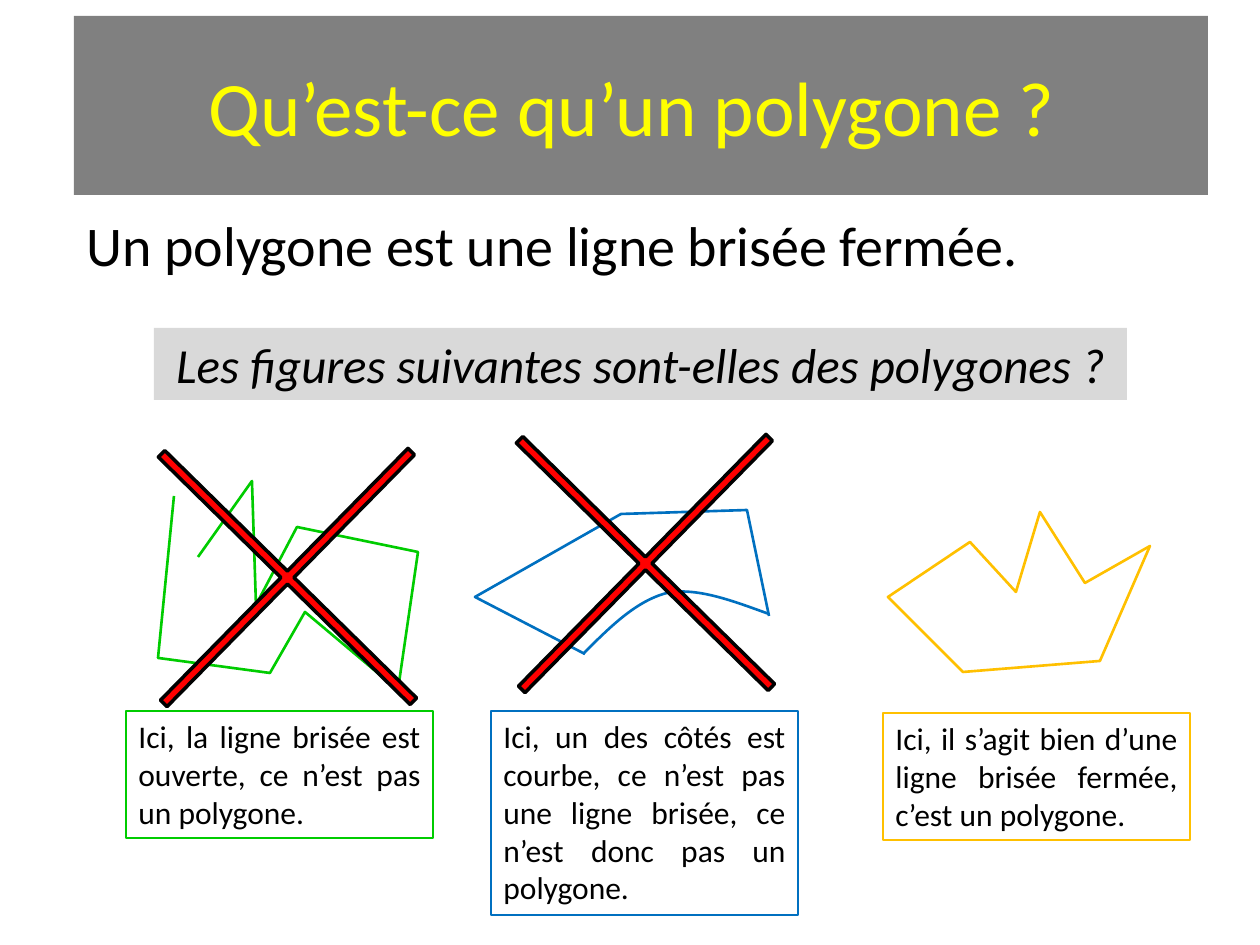
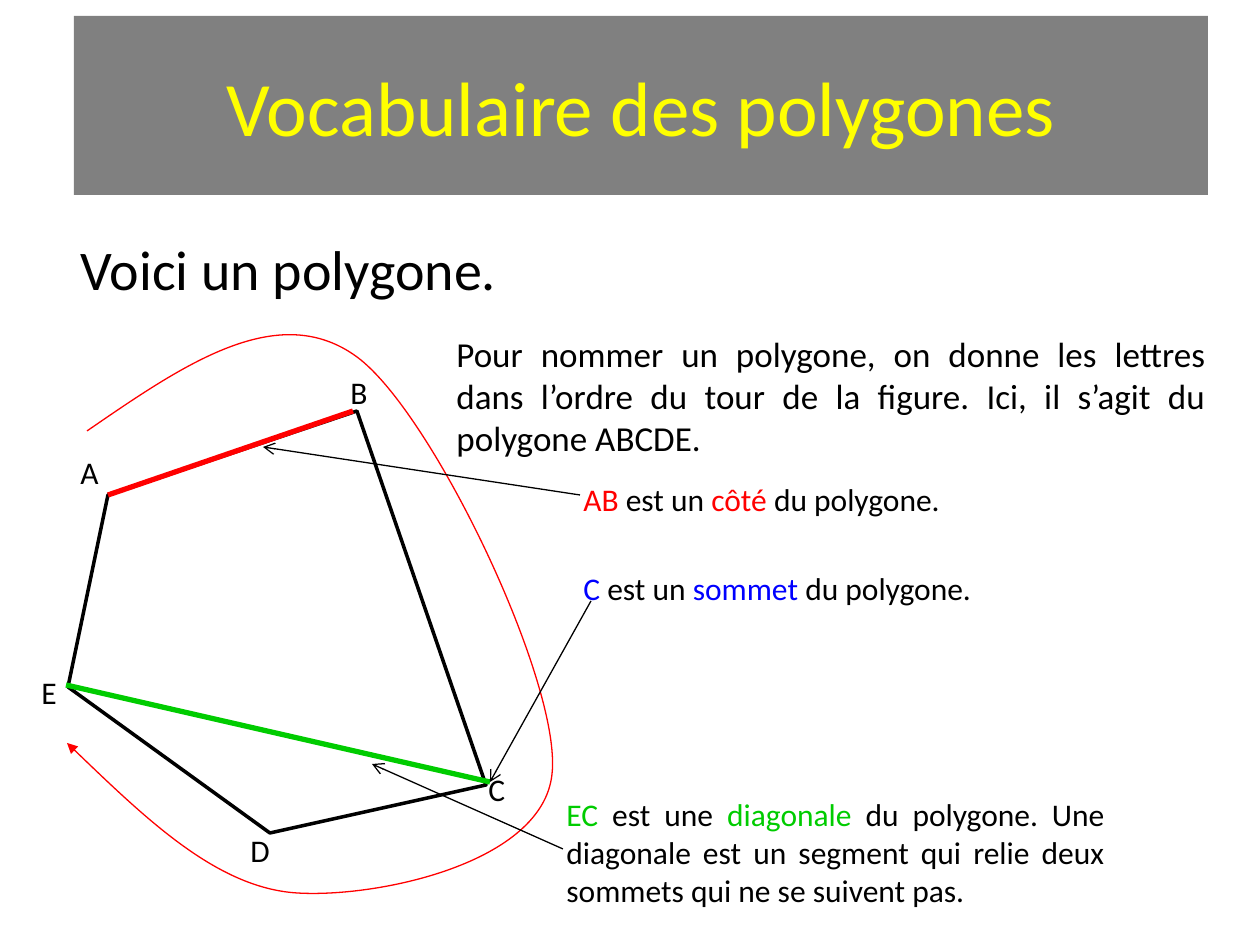
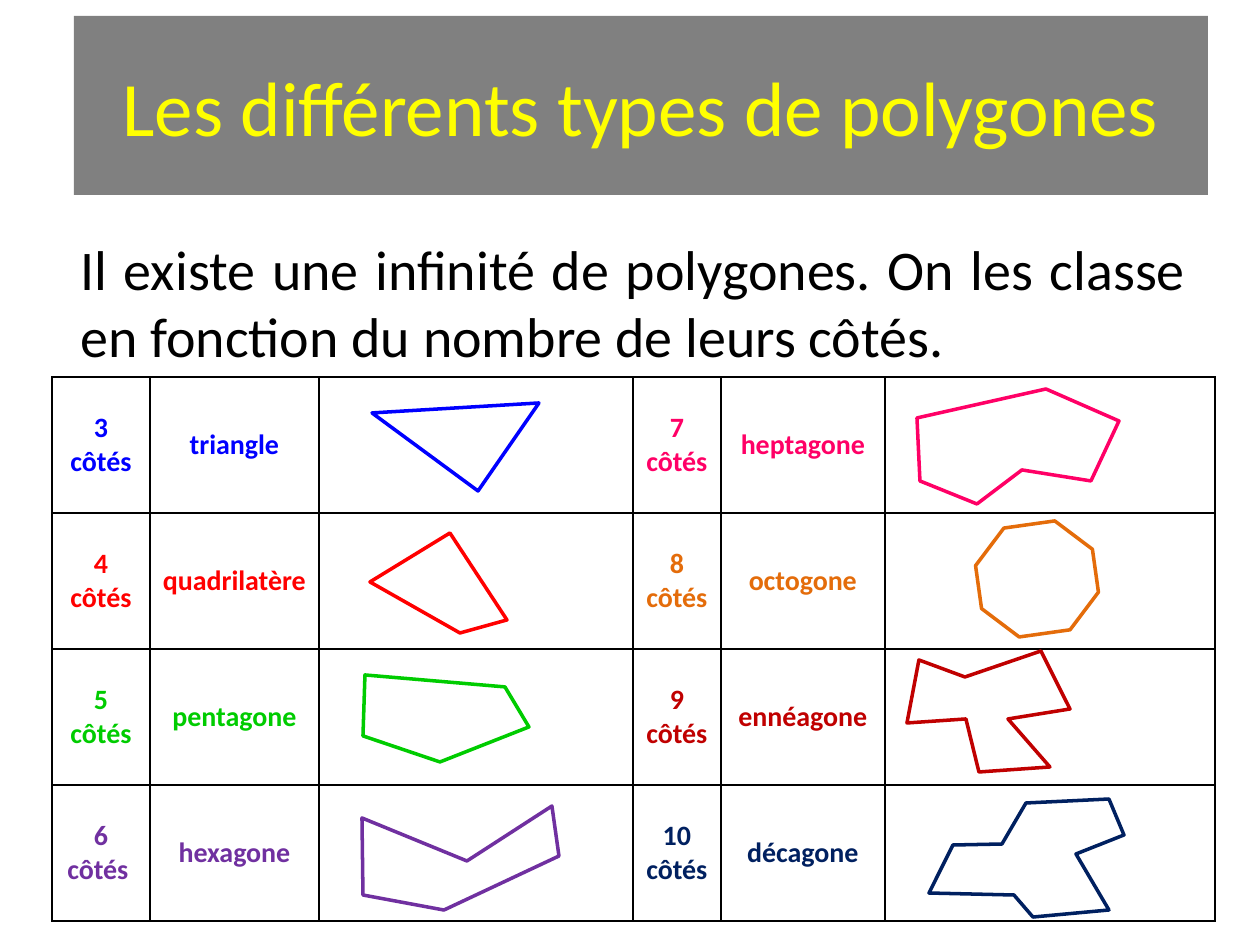
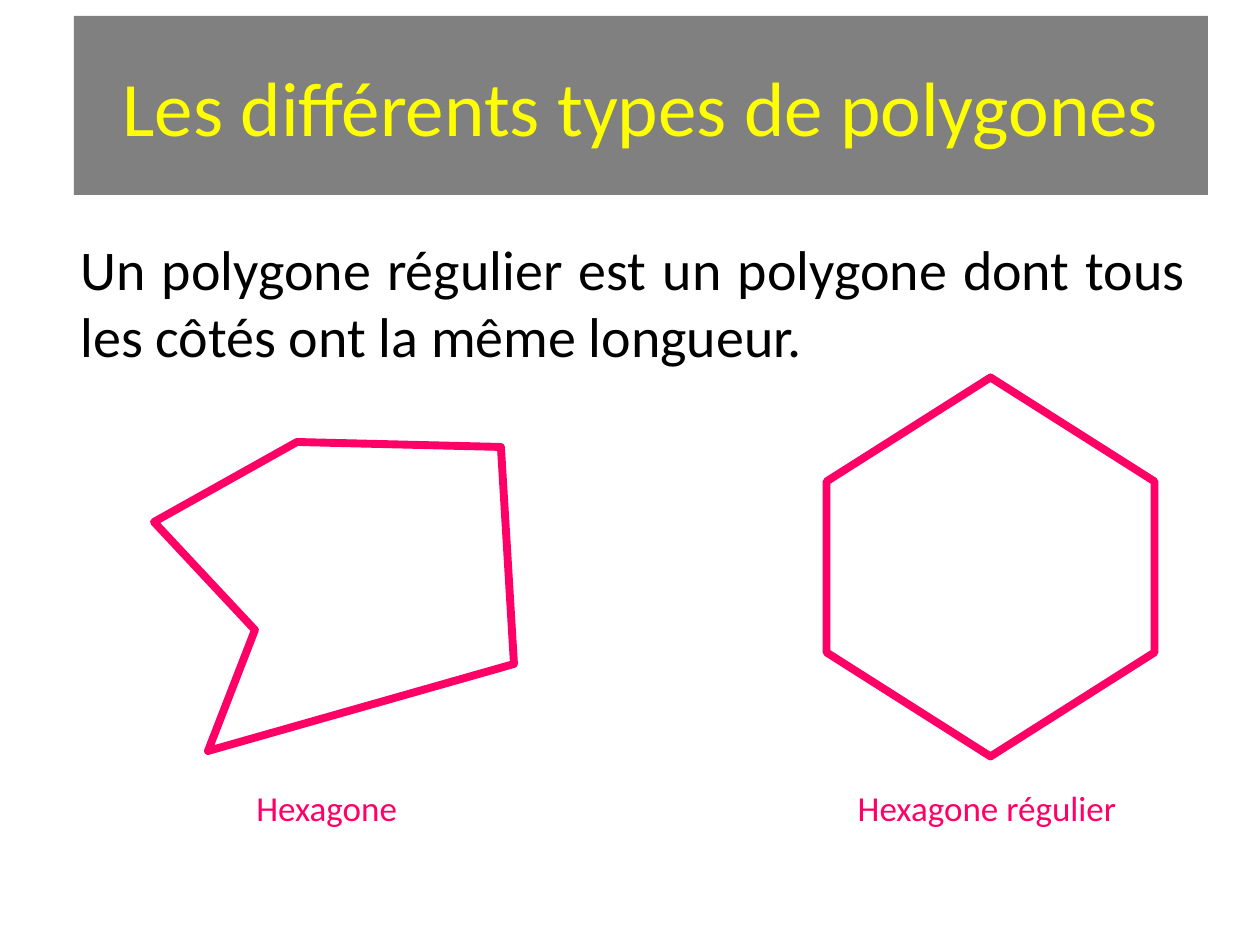
from lxml.etree import SubElement
from pptx import Presentation
from pptx.dml.color import RGBColor
from pptx.enum.shapes import MSO_CONNECTOR, MSO_SHAPE
from pptx.enum.text import MSO_ANCHOR, MSO_AUTO_SIZE, PP_ALIGN
from pptx.oxml.ns import qn
from pptx.util import Pt

PX = 914400 / 126
FONT = "Calibri"
BLACK, WHITE, GREY, LIGHT_GREY = "000000", "FFFFFF", "808080", "D9D9D9"
YELLOW, AMBER, ORANGE = "FFFF00", "FFC000", "E46C0A"
RED, DARK_RED, PINK, PURPLE = "FF0000", "C00000", "FF0066", "7030A0"
GREEN, BLUE, SKY, NAVY = "00CC00", "0000FF", "0070C0", "002060"
LEFT, CENTER, JUSTIFY = PP_ALIGN.LEFT, PP_ALIGN.CENTER, PP_ALIGN.JUSTIFY


def px(n):
    return round(n * PX)


def rgb(color):
    return RGBColor.from_string(color)


def paint(sp, fill=None, line=None, weight=1.5):
    if fill:
        sp.fill.solid()
        sp.fill.fore_color.rgb = rgb(fill)
    else:
        sp.fill.background()
    if line:
        stroke(sp, line, weight)
    else:
        sp.line.fill.background()
    sp.shadow.inherit = False


def stroke(sp, color, weight, arrow=None):
    sp.line.color.rgb = rgb(color)
    sp.line.width = Pt(weight)
    if arrow:
        SubElement(sp.element.spPr.find(qn("a:ln")), qn("a:tailEnd"), type=arrow)


def write(tf, runs, size, align, bold=False, italic=False):
    """Fill the first paragraph with (text, colour) runs."""
    p = tf.paragraphs[0]
    p.alignment = align
    for text, color in runs:
        r = p.add_run()
        r.text = text
        r.font.name, r.font.size = FONT, Pt(size)
        r.font.bold, r.font.italic = bold, italic
        r.font.color.rgb = rgb(color)


def text_box(slide, box, runs, size, align=JUSTIFY, fill=None, line=None,
             weight=1.5, italic=False):
    sp = slide.shapes.add_textbox(*map(px, box))
    paint(sp, fill, line, weight)
    tf = sp.text_frame
    tf.word_wrap = True
    tf.auto_size = MSO_AUTO_SIZE.SHAPE_TO_FIT_TEXT
    if isinstance(runs, str):
        runs = [(runs, BLACK)]
    write(tf, runs, size, align, italic=italic)


def preset(slide, kind, box, adjust, rotation, fill, line, weight):
    sp = slide.shapes.add_shape(kind, *map(px, box))
    sp.adjustments[0] = adjust
    sp.rotation = rotation
    paint(sp, fill, line, weight)


def outline(slide, origin, points, color, weight, closed=True, fill=None):
    """Draw a broken line whose points are relative to origin."""
    builder = slide.shapes.build_freeform(*points[0], scale=PX)
    builder.add_line_segments(points[1:], close=closed)
    sp = builder.convert_to_shape(*map(px, origin))
    paint(sp, fill, color, weight)
    return sp


def curve(slide, origin, points, color, weight, arrow=None):
    """Draw a Bézier curve: a start, then two handles and an end per piece."""
    sp = outline(slide, origin, points, color, weight, closed=False)
    geometry = sp.element.spPr.find(".//" + qn("a:path"))
    segments = geometry.findall(qn("a:lnTo"))
    for i in range(0, len(segments), 3):
        bezier = SubElement(geometry, qn("a:cubicBezTo"))
        for segment in segments[i:i + 3]:
            bezier.append(segment[0])
            geometry.remove(segment)
    stroke(sp, color, weight, arrow)


def segment(slide, origin, start, end, color, weight, arrow=None):
    x, y = origin
    ends = (x + start[0], y + start[1], x + end[0], y + end[1])
    cxn = slide.shapes.add_connector(MSO_CONNECTOR.STRAIGHT, *map(px, ends))
    stroke(cxn, color, weight, arrow)
    SubElement(cxn.element.spPr, qn("a:effectLst"))


def titled_slide(prs, title):
    slide = prs.slides.add_slide(prs.slide_layouts[6])
    sp = slide.shapes.add_shape(MSO_SHAPE.RECTANGLE, *map(px, (74, 16, 1134, 179)))
    paint(sp, GREY)
    sp.text_frame.word_wrap = True
    sp.text_frame.vertical_anchor = MSO_ANCHOR.MIDDLE
    write(sp.text_frame, [(title, YELLOW)], 44, CENTER)
    return slide


def intro(slide, text, height=149):
    text_box(slide, (68, 228, 1131, height), text, 32, line=WHITE, weight=0.75)


def caption(slide, origin, text, color, top=311, height=127):
    x, y = origin
    text_box(slide, (x, y + top, 307, height), text, 18, line=color)


def cross_out(slide, origin, dx, dy):
    x, y = origin
    preset(slide, MSO_SHAPE.CROSS, (x + dx, y + dy, 353, 353), 0.487, 314.5,
           RED, BLACK, 2)


def open_line_example(slide, origin):
    points = [(48, 96), (32, 258), (144, 273), (179, 212), (272, 290),
              (292, 152), (171, 127), (130, 205), (126, 81), (72, 157)]
    outline(slide, origin, points, GREEN, 1.5, closed=False)
    caption(slide, origin,
            "Ici, la ligne brisée est ouverte, ce n’est pas un polygone.", GREEN)
    cross_out(slide, origin, -15, 1)


def curved_side_example(slide, origin):
    sides = [(278, 216), (256, 110), (130, 114), (-16, 197), (94, 254)]
    curved_side = [(278, 214), (242, 201), (206, 187), (176, 193),
                   (145, 201), (119, 227), (92, 254)]
    outline(slide, origin, sides, SKY, 1.5, closed=False)
    curve(slide, origin, curved_side, SKY, 1.5)
    cross_out(slide, origin, -22, -13)
    caption(slide, origin,
            "Ici, un des côtés est courbe, ce n’est pas une ligne brisée, "
            "ce n’est donc pas un polygone.", SKY, height=204)


def polygon_example(slide, origin):
    points = [(87, 142), (5, 197), (80, 272), (217, 261),
              (267, 146), (202, 183), (157, 112), (133, 192)]
    outline(slide, origin, points, AMBER, 1.5, fill=WHITE)
    caption(slide, origin,
            "Ici, il s’agit bien d’une ligne brisée fermée, c’est un polygone.",
            AMBER, top=313)


def definition_slide(prs):
    slide = titled_slide(prs, "Qu’est-ce qu’un polygone ? ")
    text_box(slide, (74, 204, 1131, 81),
             "Un polygone est une ligne brisée fermée.", 32)
    text_box(slide, (154, 328, 973, 72),
             "Les figures suivantes sont-elles des polygones ?", 28, CENTER,
             fill=LIGHT_GREY, italic=True)
    open_line_example(slide, (126, 400))
    curved_side_example(slide, (491, 400))
    polygon_example(slide, (883, 400))


def named_polygon(slide, origin):
    x, y = origin
    vertices = {"A": (79, 175), "E": (39, 367), "D": (241, 513),
                "C": (457, 465), "B": (328, 91)}
    labels = {"A": (39, 127), "B": (309, 47), "C": (447, 444),
              "D": (209, 505), "E": (0, 347)}
    tour = [(58, 111), (154, 45), (249, -21), (328, 37), (404, 93), (533, 364),
            (523, 454), (514, 543), (349, 578), (268, 573), (188, 568),
            (113, 495), (38, 423)]
    outline(slide, origin, list(vertices.values()), BLACK, 2)
    for letter, (dx, dy) in labels.items():
        text_box(slide, (x + dx, y + dy, 49, 50), letter, 18, LEFT)
    curve(slide, origin, tour, RED, 0.75, "triangle")
    segment(slide, origin, vertices["A"], (324, 91), RED, 3)
    segment(slide, origin, (37, 365), (461, 462), GREEN, 3)


def term(slide, box, name, link, word, rest, color, start, end):
    """Explain a word and point from the box to its part of the figure."""
    runs = [(name, color), (link, BLACK), (word, color), (rest, BLACK)]
    text_box(slide, box, runs, 18)
    segment(slide, box[:2], start, end, BLACK, 0.75, "arrow")


def vocabulary_slide(prs):
    slide = titled_slide(prs, "Vocabulaire des polygones")
    intro(slide, "Voici un polygone.", 81)
    text_box(slide, (444, 326, 774, 140),
             "Pour nommer un polygone, on donne les lettres dans l’ordre du tour "
             "de la figure. Ici, il s’agit du polygone ABCDE.", 20,
             line=WHITE, weight=0.75)
    named_polygon(slide, (29, 320))
    term(slide, (571, 474, 427, 50), "AB ", "est un ", "côté ", "du polygone.",
         RED, (9, 21), (-308, -27))
    term(slide, (571, 563, 427, 50), "C ", "est un ", "sommet ", "du polygone.",
         BLUE, (20, 38), (-81, 219))
    term(slide, (554, 789, 563, 127), "EC ", "est une ", "diagonale ",
         "du polygone. Une diagonale est un segment qui relie deux sommets "
         "qui ne se suivent pas.", GREEN, (9, 60), (-182, -25))


# Sides, name, colour, and vertices relative to the drawing's cell.
POLYGONS = [
    ("3 côtés", "triangle", BLUE, [(53, 36), (159, 114), (220, 26)]),
    ("4 côtés", "quadrilatère", RED,
     [(51, 69), (131, 20), (188, 107), (141, 120)]),
    ("5 côtés", "pentagone", GREEN,
     [(46, 26), (44, 87), (121, 113), (210, 78), (186, 38)]),
    ("6 côtés ", "hexagone", PURPLE,
     [(43, 33), (44, 110), (125, 125), (240, 71), (233, 21), (148, 76)]),
    ("7 côtés ", "heptagone", PINK,
     [(32, 41), (35, 104), (92, 127), (137, 93), (206, 104), (234, 44),
      (161, 12)]),
    ("8 côtés", "octogone", ORANGE, None),
    ("9 côtés", "ennéagone", DARK_RED,
     [(80, 28), (34, 11), (22, 74), (81, 70), (94, 123), (165, 118),
      (123, 70), (185, 60), (156, 2)]),
    ("10 côtés", "décagone", NAVY,
     [(117, 59), (68, 60), (44, 108), (129, 110), (148, 132), (224, 125),
      (191, 69), (239, 50), (224, 14), (141, 18)]),
]


def border(cell):
    tcPr = cell._tc.get_or_add_tcPr()
    for side in ("a:lnL", "a:lnR", "a:lnT", "a:lnB"):
        ln = SubElement(tcPr, qn(side), w=str(Pt(1)))
        SubElement(SubElement(ln, qn("a:solidFill")), qn("a:srgbClr"), val=BLACK)


def polygon_table(slide, origin):
    x, y = origin
    widths, row_height, rows = (98, 169, 314, 88, 164, 330), 136, 4
    box = (x, y, sum(widths), row_height * rows)
    table = slide.shapes.add_table(rows, len(widths), *map(px, box)).table
    table.first_row = table.horz_banding = False
    for column, width in zip(table.columns, widths):
        column.width = px(width)
    for row in table.rows:
        row.height = px(row_height)
    for cell in table.iter_cells():
        border(cell)
        cell.fill.background()
        cell.vertical_anchor = MSO_ANCHOR.MIDDLE
    for i, (sides, name, color, points) in enumerate(POLYGONS):
        half, row = divmod(i, rows)
        col = 3 * half
        for offset, text in enumerate((sides, name)):
            write(table.cell(row, col + offset).text_frame, [(text, color)],
                  16, CENTER, bold=True)
        left, top = x + sum(widths[:col + 2]), y + row * row_height
        if points:
            outline(slide, (left, top), points, color, 2, fill=WHITE)
        else:
            preset(slide, MSO_SHAPE.OCTAGON, (left + 93, top + 11, 118, 110),
                   0.303, 352, WHITE, color, 2)


def types_slide(prs):
    slide = titled_slide(prs, "Les différents types de polygones")
    intro(slide, "Il existe une infinité de polygones. On les classe en fonction "
                 "du nombre de leurs côtés.")
    polygon_table(slide, (52, 377))


def regular_slide(prs):
    slide = titled_slide(prs, "Les différents types de polygones")
    intro(slide, "Un polygone régulier est un polygone dont tous les côtés ont "
                 "la même longueur.")
    preset(slide, MSO_SHAPE.HEXAGON, (801, 403, 379, 328), 0.317, 90,
           WHITE, PINK, 4.5)
    points = [(143, 0), (0, 80), (101, 188), (54, 309), (360, 222), (347, 5)]
    outline(slide, (154, 442), points, PINK, 4.5, fill=WHITE)
    text_box(slide, (244, 780, 180, 55), [("Hexagone", PINK)], 20, LEFT)
    text_box(slide, (843, 780, 296, 55), [("Hexagone régulier ", PINK)], 20, CENTER)


def main():
    prs = Presentation()
    prs.slide_width, prs.slide_height = px(1260), px(945)
    for build in (definition_slide, vocabulary_slide, types_slide, regular_slide):
        build(prs)
    prs.save("out.pptx")


if __name__ == "__main__":
    main()
